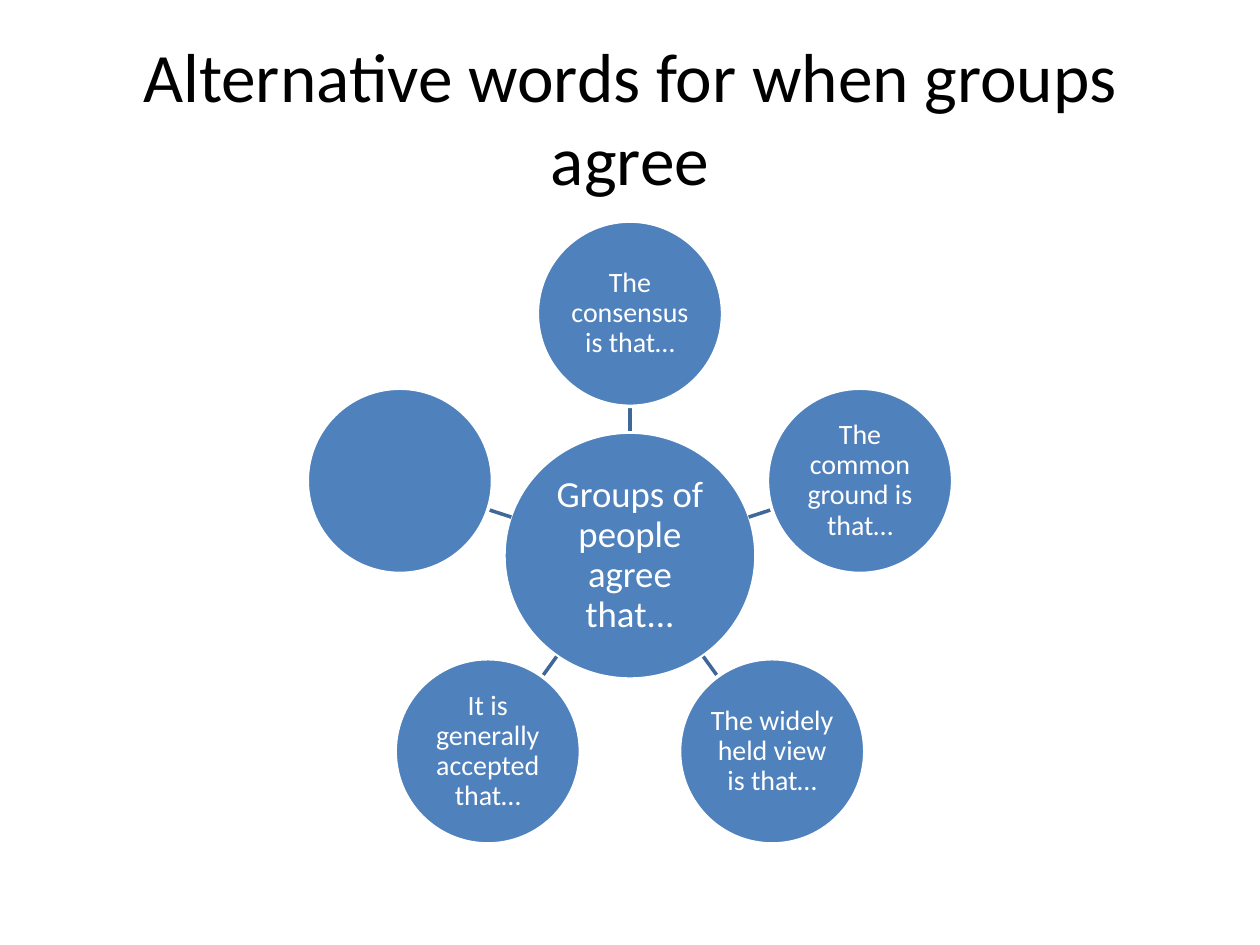
from math import cos, radians, sin

from lxml.etree import SubElement
from pptx import Presentation
from pptx.dml.color import RGBColor
from pptx.enum.shapes import MSO_CONNECTOR, MSO_SHAPE
from pptx.enum.text import MSO_ANCHOR, MSO_AUTO_SIZE, PP_ALIGN
from pptx.oxml.ns import qn
from pptx.util import Inches, Pt


def color(value):
    return RGBColor.from_string(value)


def add_circle(slide, x, y, width, height, text, size):
    shape = slide.shapes.add_shape(
        MSO_SHAPE.OVAL, Inches(x - width / 2), Inches(y - height / 2),
        Inches(width), Inches(height))
    shape.shadow.inherit = False
    shape.fill.solid()
    shape.fill.fore_color.rgb = color("4F81BD")
    shape.line.color.rgb = color("FFFFFF")
    shape.line.width = Pt(2)
    if not text:
        return
    frame = shape.text_frame
    frame.word_wrap = True
    frame.vertical_anchor = MSO_ANCHOR.MIDDLE
    frame.margin_left = frame.margin_right = Inches(0.01)
    frame.margin_top = frame.margin_bottom = Inches(0.01)
    paragraph = frame.paragraphs[0]
    paragraph.alignment = PP_ALIGN.CENTER
    paragraph.line_spacing = 0.9
    run = paragraph.add_run()
    run.text = text
    run.font.name = "Calibri"
    run.font.size = Pt(size)
    run.font.color.rgb = color("FFFFFF")


presentation = Presentation()
presentation.slide_width = Inches(10)
presentation.slide_height = Inches(7.5)
slide = presentation.slides.add_slide(presentation.slide_layouts[5])

title = slide.shapes.title
title.left, title.top = Inches(0.5), Inches(0.3)
title.width, title.height = Inches(9), Inches(1.25)
title_frame = title.text_frame
title_frame.auto_size = MSO_AUTO_SIZE.NONE
title_frame.word_wrap = True
title_frame.vertical_anchor = MSO_ANCHOR.MIDDLE
title_paragraph = title_frame.paragraphs[0]
title_paragraph.alignment = PP_ALIGN.CENTER
title_run = title_paragraph.add_run()
title_run.text = "Alternative words for when groups agree"
title_run.font.name = "Calibri"
title_run.font.size = Pt(39.6)
title_run.font.color.rgb = color("000000")

center_x, center_y = 5, 4.41
orbit = 1.92
spoke_start, spoke_end = 0.99, 1.18
phrases = [
    "The consensus is that…",
    "The common ground is that…",
    "The widely held view is that…",
    "It is generally accepted that…",
    "",
]

add_circle(slide, center_x, center_y, 2, 1.96, "Groups of people agree that...", 21)

for index, phrase in enumerate(phrases):
    angle = radians(360 / len(phrases) * index - 90)
    dx, dy = cos(angle), sin(angle)
    spoke = slide.shapes.add_connector(
        MSO_CONNECTOR.STRAIGHT,
        Inches(center_x + spoke_start * dx), Inches(center_y + spoke_start * dy),
        Inches(center_x + spoke_end * dx), Inches(center_y + spoke_end * dy))
    spoke.line.color.rgb = color("3F6797")
    spoke.line.width = Pt(2)
    SubElement(spoke._element.spPr, qn("a:effectLst"))
    add_circle(slide, center_x + orbit * dx, center_y + orbit * dy, 1.47, 1.47, phrase, 16)

presentation.save("out.pptx")
